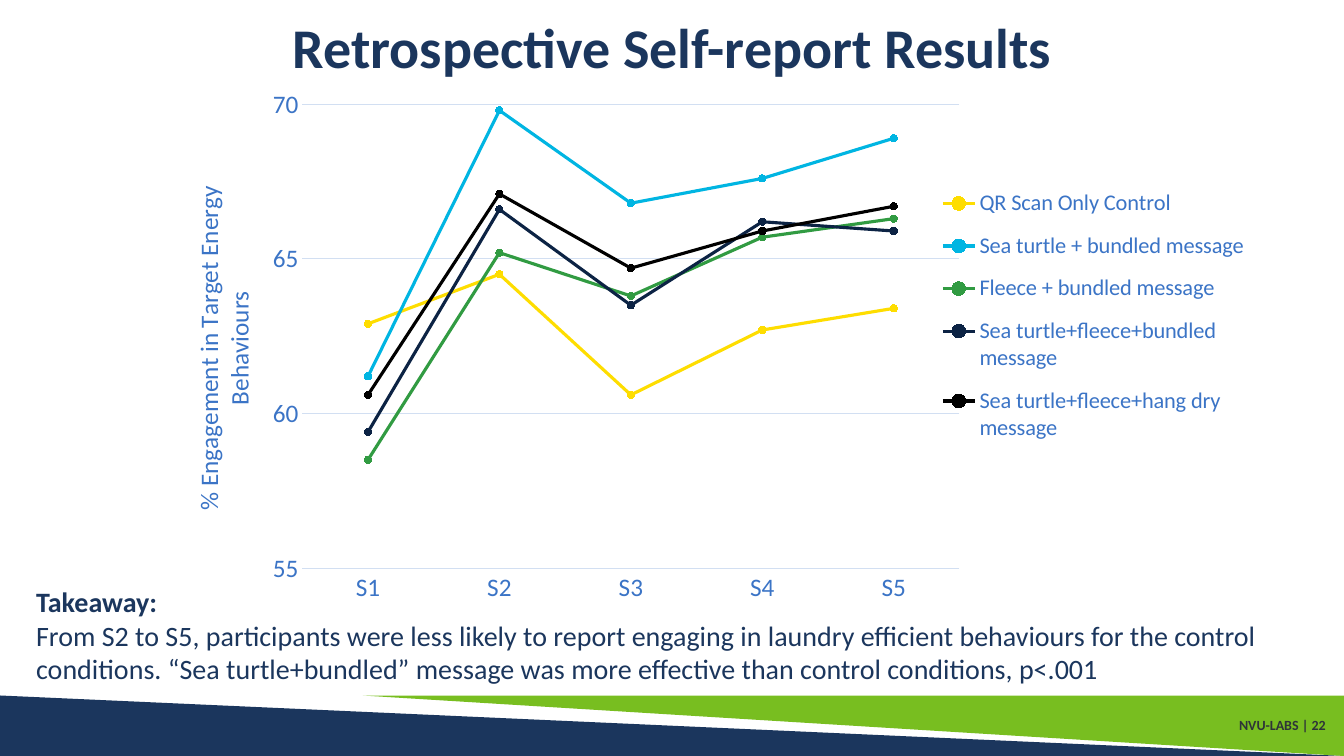
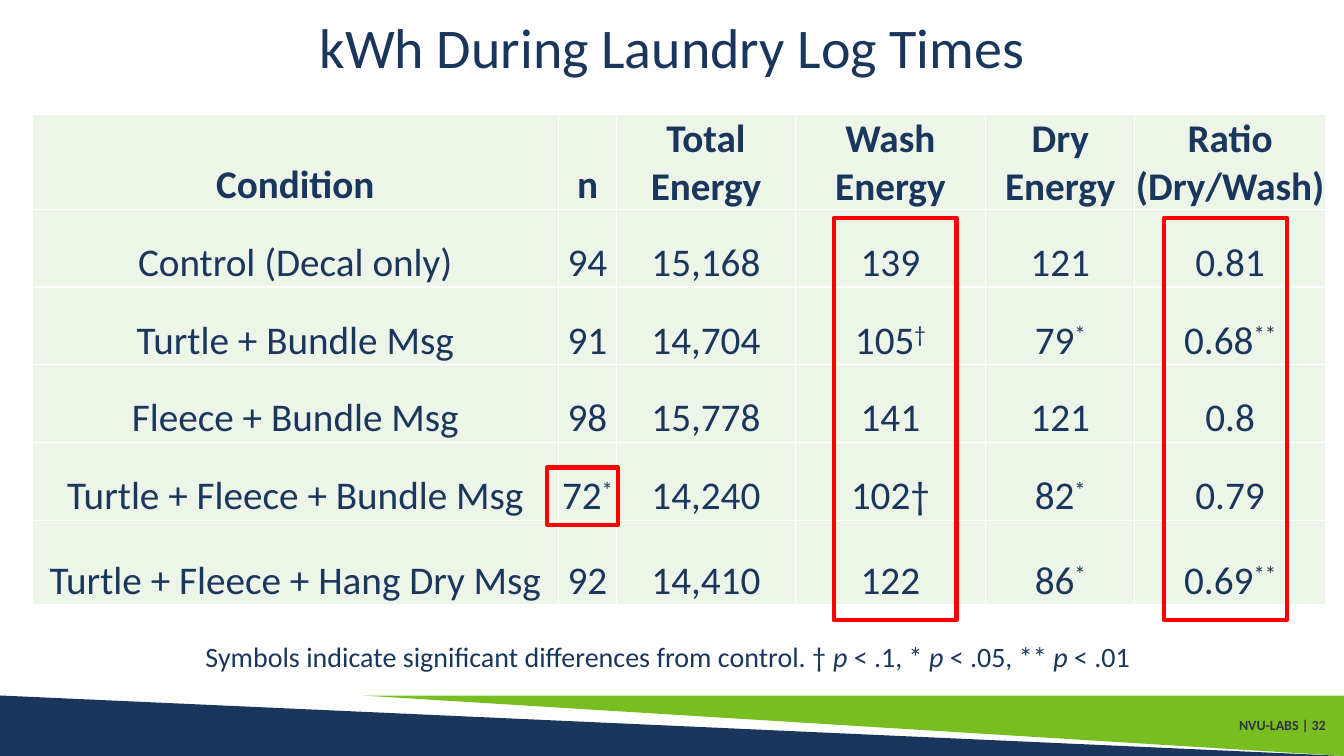
import pptx
import pptx.chart.data
import pptx.dml.color
import pptx.enum.chart
import pptx.enum.shapes
import pptx.enum.text
import pptx.oxml
import pptx.oxml.ns
import pptx.util

Pt = pptx.util.Pt
ALIGN = pptx.enum.text.PP_ALIGN
ANCHOR = pptx.enum.text.MSO_ANCHOR
SHAPE = pptx.enum.shapes.MSO_SHAPE
CHART = pptx.enum.chart

FONT = "Calibri"
COLORS = {
    "navy": "1B365D", "lime": "78BE20", "footer": "2E3438", "axis": "3B74C6",
    "grid": "D2DFF2", "cell": "EDF4E8", "white": "FFFFFF", "highlight": "FF0000",
    "yellow": "FEDD00", "cyan": "00B5E2", "green": "319B42", "midnight": "0C2344",
    "black": "000000",
}
WIDTH, HEIGHT = 960, 540
BAND_TOP, BAND_HEIGHT = 496.8, 43.2
LIME_LEFT = 259.2


def rgb(color):
    return pptx.dml.color.RGBColor.from_string(COLORS[color])


def style_font(font, size, color="navy", bold=False, italic=False):
    font.name, font.size, font.bold, font.italic = FONT, Pt(size), bold, italic
    font.color.rgb = rgb(color)


def write(frame, *paragraphs, align=ALIGN.LEFT, spacing=None, raised=False, **style):
    """Fill a text frame; a paragraph is a string or a list of (text, format) runs."""
    for index, runs in enumerate(paragraphs):
        paragraph = frame.add_paragraph() if index else frame.paragraphs[0]
        paragraph.alignment = align
        if spacing:
            paragraph.line_spacing = spacing
        for text, changes in [(runs, {})] if isinstance(runs, str) else runs:
            options = {"raised": raised, **style, **changes}
            run = paragraph.add_run()
            run.text = text
            if options.pop("raised"):
                run.font._element.set("baseline", "30000")
            style_font(run.font, **options)


def place(element, x, y, w, h):
    """Give a chart part a manual position, as fractions of the chart."""
    for old in element.findall(pptx.oxml.ns.qn("c:layout")):
        element.remove(old)
    inner = '<c:layoutTarget val="inner"/>' if element.tag.endswith("plotArea") else ""
    values = {"x": x, "y": y, "w": w, "h": h}
    layout = pptx.oxml.parse_xml(
        f'<c:layout {pptx.oxml.ns.nsdecls("c")}><c:manualLayout>{inner}'
        '<c:xMode val="edge"/><c:yMode val="edge"/>'
        + "".join(f'<c:{key} val="{value}"/>' for key, value in values.items() if value)
        + "</c:manualLayout></c:layout>")
    before = {"plotArea": 0, "legend": 1, "title": 1}
    element.insert(before[element.tag.split("}")[1]], layout)


class Deck:
    def __init__(self):
        self.presentation = pptx.Presentation()
        self.presentation.slide_width = Pt(WIDTH)
        self.presentation.slide_height = Pt(HEIGHT)
        self.slide = None

    def add_slide(self, title, number, bold=False):
        self.slide = self.presentation.slides.add_slide(self.presentation.slide_layouts[5])
        heading = self.slide.shapes.title
        heading.left, heading.top, heading.width, heading.height = map(Pt, (0, 0, WIDTH, 71.3))
        heading.text_frame.vertical_anchor = ANCHOR.MIDDLE
        write(heading.text_frame, title, align=ALIGN.CENTER, spacing=0.9, size=40, bold=bold)

        # Footer bands and page label
        self.shape(SHAPE.RIGHT_TRIANGLE, 0, BAND_TOP, WIDTH, BAND_HEIGHT, fill="navy")
        lime = self.shape(SHAPE.RIGHT_TRIANGLE, LIME_LEFT, BAND_TOP,
                          WIDTH - LIME_LEFT, BAND_HEIGHT, fill="lime")
        lime.rotation = 180
        self.text(845.3, 505.4, 108.7, 26.6, f"NVU-LABS | {number}", anchor=ANCHOR.MIDDLE,
                  align=ALIGN.RIGHT, spacing=0.9, size=10, color="footer", bold=True)

    def shape(self, kind, x, y, w, h, fill=None, line=None):
        shape = self.slide.shapes.add_shape(kind, Pt(x), Pt(y), Pt(w), Pt(h))
        shape.shadow.inherit = False
        if fill:
            shape.fill.solid()
            shape.fill.fore_color.rgb = rgb(fill)
        else:
            shape.fill.background()
        if line:
            shape.line.color.rgb = rgb(line)
            shape.line.width = Pt(3)
        else:
            shape.line.fill.background()
        return shape

    def text(self, x, y, w, h, *paragraphs, anchor=ANCHOR.TOP, wrap=True, **style):
        frame = self.slide.shapes.add_textbox(Pt(x), Pt(y), Pt(w), Pt(h)).text_frame
        frame.word_wrap = wrap
        frame.vertical_anchor = anchor
        write(frame, *paragraphs, **style)

    def line_chart(self, x, y, w, h, categories, series, value_title, scale):
        data = pptx.chart.data.CategoryChartData()
        data.categories = categories
        for name, _, values in series:
            data.add_series(name, values)
        chart = self.slide.shapes.add_chart(
            CHART.XL_CHART_TYPE.LINE_MARKERS, Pt(x), Pt(y), Pt(w), Pt(h), data).chart
        style_font(chart.font, 10)
        chart.has_title = False
        plot = chart.plots[0]
        plot.vary_by_categories = False
        place(chart._chartSpace.chart.plotArea, 0.124, 0.048, 0.574, 0.87)

        # Series
        for line, (_, color, _) in zip(plot.series, series):
            line.smooth = False
            line.format.line.width = Pt(2.25)
            line.format.line.color.rgb = rgb(color)
            line.marker.style = CHART.XL_MARKER_STYLE.CIRCLE
            line.marker.size = 5
            line.marker.format.fill.solid()
            line.marker.format.fill.fore_color.rgb = rgb(color)
            line.marker.format.line.color.rgb = rgb(color)

        # Axes
        values = chart.value_axis
        for axis in (chart.category_axis, values):
            axis.major_tick_mark = axis.minor_tick_mark = CHART.XL_TICK_MARK.NONE
            style_font(axis.tick_labels.font, 18, "axis")
        values.minimum_scale, values.maximum_scale, values.major_unit = scale
        values.format.line.fill.background()
        for line in (chart.category_axis.format.line, values.major_gridlines.format.line):
            line.color.rgb = rgb("grid")
            line.width = Pt(0.75)
        write(values.axis_title.text_frame, *value_title, align=ALIGN.CENTER,
              size=18, color="axis")
        place(values.axis_title._element, 0.025, 0.196, None, None)

        # Legend
        chart.has_legend = True
        chart.legend.position = CHART.XL_LEGEND_POSITION.RIGHT
        chart.legend.include_in_layout = False
        style_font(chart.legend.font, 16, "axis")
        place(chart.legend._element, 0.68, 0.18, 0.27, 0.53)

    def table(self, x, y, widths, heights, rows):
        table = self.slide.shapes.add_table(len(rows), len(widths), Pt(x), Pt(y),
                                            Pt(sum(widths)), Pt(sum(heights))).table
        for column, width in zip(table.columns, widths):
            column.width = Pt(width)
        for index, (row, height, contents) in enumerate(zip(table.rows, heights, rows)):
            row.height = Pt(height)
            for cell, content in zip(row.cells, contents):
                self.cell(cell, content, bold=index == 0)

    def cell(self, cell, content, bold):
        cell.fill.solid()
        cell.fill.fore_color.rgb = rgb("cell")
        cell.vertical_anchor = ANCHOR.BOTTOM
        cell.margin_left = cell.margin_right = cell.margin_top = Pt(0.7)
        cell.margin_bottom = 0
        write(cell.text_frame, content, align=ALIGN.CENTER, size=28, bold=bold)
        for index, side in enumerate("LRTB"):
            cell._tc.get_or_add_tcPr().insert(index, pptx.oxml.parse_xml(
                f'<a:ln{side} {pptx.oxml.ns.nsdecls("a")} w="{Pt(1)}"><a:solidFill>'
                f'<a:srgbClr val="{COLORS["white"]}"/></a:solidFill></a:ln{side}>'))


def marked(value, symbol):
    return [(value, {}), (symbol, {"raised": True})]


def main():
    deck = Deck()

    # Self-report results
    deck.add_slide("Retrospective Self-report Results", 22, bold=True)
    deck.line_chart(
        114.5, 56.2, 817.9, 380.9, ["S1", "S2", "S3", "S4", "S5"],
        [("QR Scan Only Control", "yellow", (62.9, 64.5, 60.6, 62.7, 63.4)),
         ("Sea turtle + bundled message", "cyan", (61.2, 69.8, 66.8, 67.6, 68.9)),
         ("Fleece + bundled message", "green", (58.5, 65.2, 63.8, 65.7, 66.3)),
         ("Sea turtle+fleece+bundled message", "midnight", (59.4, 66.6, 63.5, 66.2, 65.9)),
         ("Sea turtle+fleece+hang dry message", "black", (60.6, 67.1, 64.7, 65.9, 66.7))],
        value_title=["% Engagement in Target Energy", "Behaviours"], scale=(55, 70, 5))
    deck.text(
        18.7, 414, 946, 80, [("Takeaway:", {"bold": True})],
        "From S2 to S5, participants were less likely to report engaging in laundry efficient "
        "behaviours for the control conditions. “Sea turtle+bundled” message was more effective "
        "than control conditions, p<.001", size=20)

    # Energy use by condition
    deck.add_slide("kWh During Laundry Log Times", 32)
    italic = {"italic": True}
    deck.text(
        139.7, 453.6, 681, 31.7,
        [("Symbols indicate significant differences from control. † ", {}), ("p ", italic),
         ("< .1, * ", {}), ("p", italic), (" < .05, ** ", {}), ("p", italic), (" < .01", {})],
        wrap=False, size=20)
    deck.table(
        23, 81.4, [375.8, 41.8, 127.4, 136.1, 106.6, 136.1], [62] + [55.6] * 4 + [60.5],
        [["Condition", "n", "Total Energy", "Wash Energy", "Dry Energy", "Ratio (Dry/Wash)"],
         ["Control (Decal only)", "94", "15,168", "139", "121", "0.81"],
         ["Turtle + Bundle Msg", "91", "14,704", marked("105", "†"), marked("79", "*"),
          marked("0.68", "**")],
         ["Fleece + Bundle Msg", "98", "15,778", "141", "121", "0.8"],
         ["Turtle + Fleece + Bundle Msg", marked("72", "*"), "14,240", "102†",
          marked("82", "*"), "0.79"],
         ["Turtle + Fleece + Hang Dry Msg", "92", "14,410", "122", marked("86", "*"),
          marked("0.69", "**")]])

    # Highlighted results
    for x, y, w, h in [(391, 334, 50.4, 41), (595.5, 155.7, 87.8, 287.3),
                       (831.6, 155.7, 87.8, 287.3)]:
        deck.shape(SHAPE.RECTANGLE, x, y, w, h, line="highlight")

    deck.presentation.save("out.pptx")


if __name__ == "__main__":
    main()
